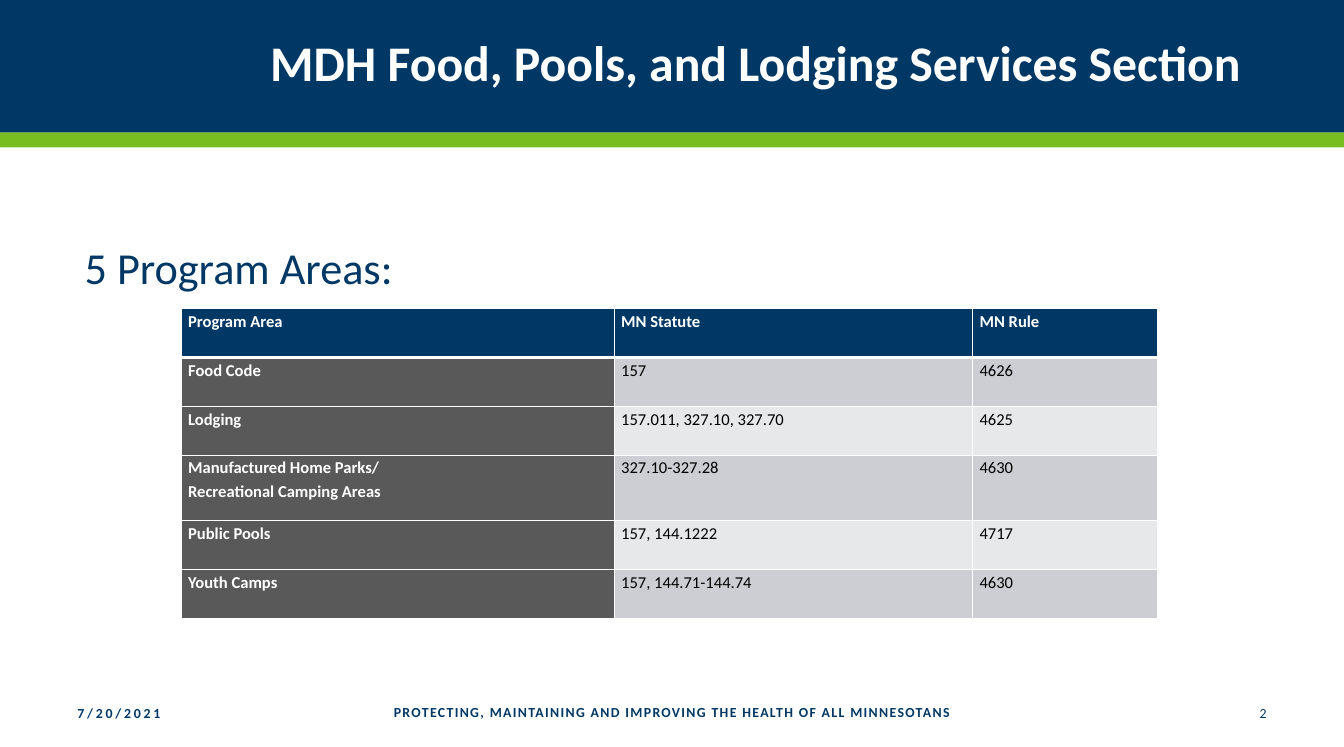
from lxml.etree import SubElement
from pptx import Presentation
from pptx.dml.color import RGBColor
from pptx.enum.shapes import MSO_SHAPE
from pptx.enum.text import MSO_ANCHOR, PP_ALIGN
from pptx.oxml.ns import qn
from pptx.util import Inches, Pt

TITLE = "MDH Food, Pools, and Lodging Services Section"
INTRO = "5 Program Areas:"
PROGRAMS = [
    ("Program Area", "MN Statute", "MN Rule"),
    ("Food Code", "157", "4626"),
    ("Lodging", "157.011, 327.10, 327.70", "4625"),
    ("Manufactured Home Parks/\nRecreational Camping Areas", "327.10-327.28", "4630"),
    ("Public Pools", "157, 144.1222", "4717"),
    ("Youth Camps", "157, 144.71-144.74", "4630"),
]
# text, left, top, width, alignment, bold, letter spacing in points
FOOTERS = [
    ("7/20/2021", 0.68, 6.96, 1.54, PP_ALIGN.LEFT, True, 2),
    ("PROTECTING, MAINTAINING AND IMPROVING THE HEALTH OF ALL MINNESOTANS",
     2.22, 6.95, 9.06, PP_ALIGN.CENTER, True, 1),
    ("2", 11.28, 6.96, 1.54, PP_ALIGN.RIGHT, False, 2),
]
COLORS = {"navy": "003865", "green": "78BE21", "white": "FFFFFF", "black": "000000",
          "label": "595959", "band_dark": "CCCED3", "band_light": "E7E8EA"}
FONT = "Calibri"
COLUMN_WIDTHS = (4.35, 3.6, 1.86)
ROW_HEIGHT, TALL_ROW_HEIGHT = 0.49, 0.66
SLIDE_WIDTH, SLIDE_HEIGHT = 13.5, 7.5
HEADER_HEIGHT, STRIPE_HEIGHT = 1.33, 0.15


def rgb(name):
    return RGBColor.from_string(COLORS[name])


def paint(target, color):
    target.fill.solid()
    target.fill.fore_color.rgb = rgb(color)


def place(shape, left, top, width, height):
    shape.left, shape.top = Inches(left), Inches(top)
    shape.width, shape.height = Inches(width), Inches(height)


def write(paragraph, text, size, color, bold=False, align=PP_ALIGN.LEFT, line_spacing=1.0):
    paragraph.alignment = align
    paragraph.line_spacing = line_spacing
    paragraph.space_before = Pt(0)
    run = paragraph.add_run()
    run.text = text
    run.font.name, run.font.size, run.font.bold = FONT, Pt(size), bold
    run.font.color.rgb = rgb(color)
    return run


def add_header_bands(slide):
    """Put the navy band and green stripe behind the placeholders."""
    for top, height, color in ((0, HEADER_HEIGHT, "navy"),
                               (HEADER_HEIGHT, STRIPE_HEIGHT, "green")):
        band = slide.shapes.add_shape(MSO_SHAPE.RECTANGLE, 0, Inches(top),
                                      Inches(SLIDE_WIDTH), Inches(height))
        paint(band, color)
        band.line.fill.background()
        band.shadow.inherit = False
        slide.shapes.element.insert(2, band.element)


def fill_title(title):
    place(title, 0, 0, 12.82, 1.32)
    paint(title, "navy")
    frame = title.text_frame
    frame.vertical_anchor = MSO_ANCHOR.MIDDLE
    frame.margin_right = Inches(0.35)
    write(frame.paragraphs[0], TITLE, 36, "white", True, PP_ALIGN.RIGHT, 0.9)


def fill_intro(body):
    place(body, 0.75, 1.75, 12.42, 5.02)
    frame = body.text_frame
    frame.vertical_anchor = MSO_ANCHOR.TOP
    frame.margin_top = Inches(0.66)
    intro = frame.paragraphs[0]
    write(intro, INTRO, 32, "navy")
    properties = intro._p.get_or_add_pPr()
    properties.set("marL", "0")
    properties.set("indent", "0")
    SubElement(properties, qn("a:buNone"))


def set_borders(cell, row):
    """White cell borders, with a heavier rule under the heading row."""
    heavy = {0: "lnB", 1: "lnT"}.get(row)
    for side in ("lnL", "lnR", "lnT", "lnB"):
        line = SubElement(cell._tc.get_or_add_tcPr(), qn(f"a:{side}"),
                          w=str(Pt(3 if side == heavy else 1)))
        SubElement(SubElement(line, qn("a:solidFill")), qn("a:srgbClr"), val=COLORS["white"])


def fill_cell(cell, text, row, column):
    set_borders(cell, row)
    emphasized = row == 0 or column == 0
    if row == 0:
        paint(cell, "navy")
    elif column == 0:
        paint(cell, "label")
    else:
        paint(cell, "band_dark" if row % 2 else "band_light")
    cell.margin_left = cell.margin_right = Inches(0.07)
    cell.margin_top = cell.margin_bottom = 0
    cell.vertical_anchor = MSO_ANCHOR.TOP
    frame = cell.text_frame
    for index, line in enumerate(text.split("\n")):
        paragraph = frame.add_paragraph() if index else frame.paragraphs[0]
        write(paragraph, line, 12, "white" if emphasized else "black",
              emphasized, line_spacing=1.15)


def add_program_table(slide):
    heights = [TALL_ROW_HEIGHT if "\n" in program[0] else ROW_HEIGHT for program in PROGRAMS]
    table = slide.shapes.add_table(
        len(PROGRAMS), len(COLUMN_WIDTHS), Inches(1.82), Inches(3.1),
        Inches(sum(COLUMN_WIDTHS)), Inches(sum(heights))).table
    for column, width in zip(table.columns, COLUMN_WIDTHS):
        column.width = Inches(width)
    for row, program in enumerate(PROGRAMS):
        table.rows[row].height = Inches(heights[row])
        for column, text in enumerate(program):
            fill_cell(table.cell(row, column), text, row, column)


def add_footers(slide):
    for text, left, top, width, align, bold, spacing in FOOTERS:
        frame = slide.shapes.add_textbox(
            Inches(left), Inches(top), Inches(width), Inches(0.4)).text_frame
        frame.word_wrap = True
        frame.vertical_anchor = MSO_ANCHOR.MIDDLE
        run = write(frame.paragraphs[0], text, 10, "navy", bold, align)
        run.font._element.set("spc", str(spacing * 100))


def main():
    deck = Presentation()
    deck.slide_width, deck.slide_height = Inches(SLIDE_WIDTH), Inches(SLIDE_HEIGHT)
    slide = deck.slides.add_slide(deck.slide_layouts[1])
    add_header_bands(slide)
    fill_title(slide.shapes.title)
    fill_intro(slide.placeholders[1])
    add_program_table(slide)
    add_footers(slide)
    deck.save("out.pptx")


if __name__ == "__main__":
    main()
